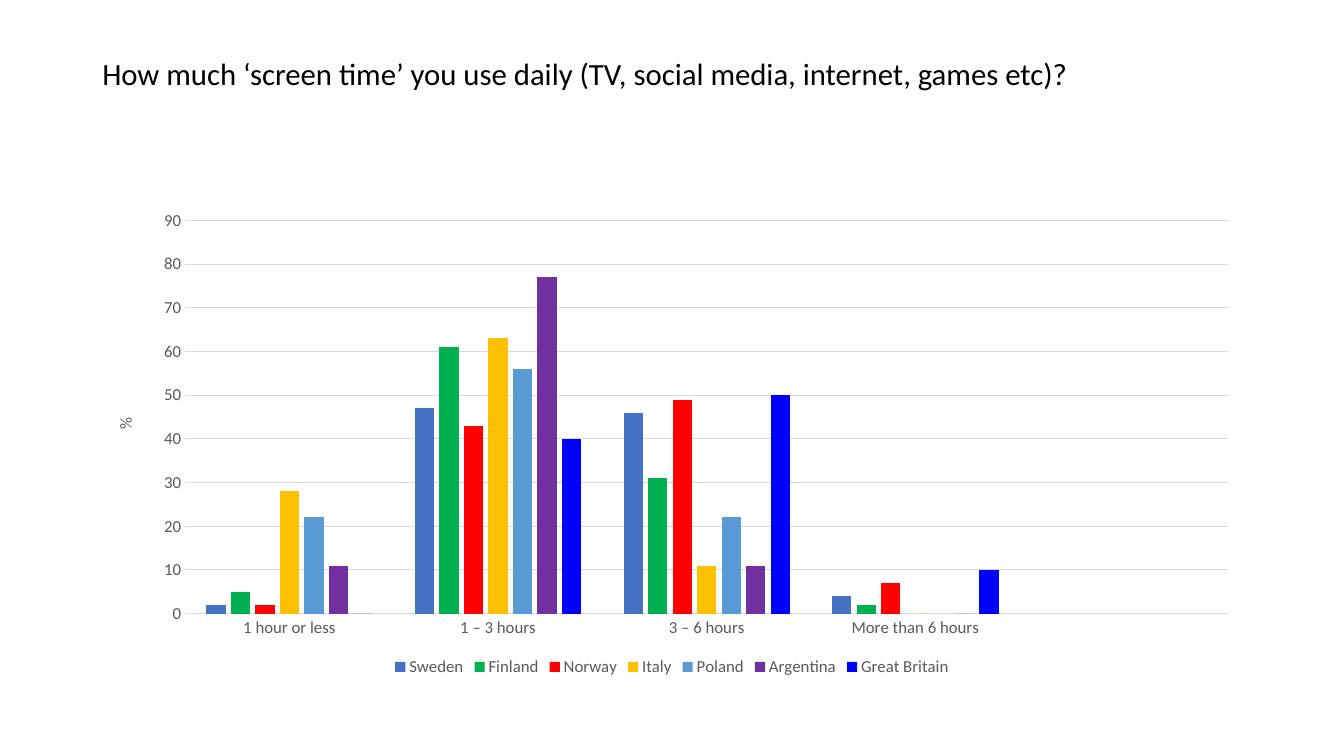
from lxml.etree import SubElement
from pptx import Presentation
from pptx.chart.data import CategoryChartData
from pptx.dml.color import RGBColor
from pptx.enum.chart import XL_CHART_TYPE, XL_LEGEND_POSITION, XL_TICK_MARK
from pptx.enum.text import MSO_ANCHOR
from pptx.oxml.ns import qn
from pptx.util import Pt

FONT = "Calibri"
BLACK = RGBColor(0x00, 0x00, 0x00)
GREY = RGBColor(0x59, 0x59, 0x59)
GRID = RGBColor(0xD9, 0xD9, 0xD9)
QUESTION = "How much ‘screen time’ you use daily (TV, social media, internet, games etc)?"
HOURS = ["1 hour or less", "1 – 3 hours", "3 – 6 hours", "More than 6 hours", ""]
COUNTRIES = [
    ("Sweden", [2, 47, 46, 4, None], RGBColor(0x44, 0x72, 0xC4)),
    ("Finland", [5, 61, 31, 2, None], RGBColor(0x00, 0xB0, 0x50)),
    ("Norway", [2, 43, 49, 7, None], RGBColor(0xFF, 0x00, 0x00)),
    ("Italy", [28, 63, 11, 0, None], RGBColor(0xFF, 0xC0, 0x00)),
    ("Poland", [22, 56, 22, None, None], RGBColor(0x5B, 0x9B, 0xD5)),
    ("Argentina", [11, 77, 11, 0, None], RGBColor(0x70, 0x30, 0xA0)),
    ("Great Britain", [0, 40, 50, 10, None], RGBColor(0x00, 0x00, 0xFF)),
]
PLOT_AREA = {"x": 0.08, "y": 0.04, "w": 0.9, "h": 0.82}


def style_font(font, size, color):
    """Set the typeface, size and colour of a font."""
    font.name = FONT
    font.size = Pt(size)
    font.bold = False
    font.color.rgb = color


def style_line(line, color):
    """Draw a thin line in the given colour."""
    line.color.rgb = color
    line.width = Pt(0.75)


def add_question(slide, left, top, width, height):
    """Place the survey question in its box."""
    question = slide.shapes.add_textbox(Pt(left), Pt(top), Pt(width), Pt(height))
    frame = question.text_frame
    frame.word_wrap = True
    frame.vertical_anchor = MSO_ANCHOR.TOP
    frame.margin_top = Pt(13)
    paragraph = frame.paragraphs[0]
    paragraph.line_spacing = 0.9
    run = paragraph.add_run()
    run.text = QUESTION
    style_font(run.font, 22, BLACK)


def place_plot(chart, fractions):
    """Fix the inner plot area to fractions of the chart box."""
    plot_area = chart.plots[0]._element.getparent()
    for previous in plot_area.findall(qn("c:layout")):
        plot_area.remove(previous)
    layout = SubElement(plot_area, qn("c:layout"))
    plot_area.insert(0, layout)
    manual = SubElement(layout, qn("c:manualLayout"))
    settings = {"layoutTarget": "inner", "xMode": "edge", "yMode": "edge", **fractions}
    for tag, value in settings.items():
        SubElement(manual, qn(f"c:{tag}")).set("val", str(value))


def style_axes(chart):
    """Format the hours axis and the percentage axis."""
    hours, percent = chart.category_axis, chart.value_axis
    for axis in (hours, percent):
        axis.major_tick_mark = axis.minor_tick_mark = XL_TICK_MARK.NONE
        style_font(axis.tick_labels.font, 12, GREY)
    style_line(hours.format.line, GRID)
    percent.format.line.fill.background()
    percent.minimum_scale, percent.maximum_scale, percent.major_unit = 0, 90, 10
    percent.has_major_gridlines = True
    style_line(percent.major_gridlines.format.line, GRID)
    unit = percent.axis_title.text_frame.paragraphs[0].add_run()
    unit.text = "%"
    style_font(unit.font, 12, GREY)


def add_screen_time_chart(slide, left, top, width, height):
    """Place the column chart of screen time by country."""
    answers = CategoryChartData(number_format="0")
    answers.categories = HOURS
    for country, shares, _ in COUNTRIES:
        answers.add_series(country, shares)
    chart = slide.shapes.add_chart(
        XL_CHART_TYPE.COLUMN_CLUSTERED, Pt(left), Pt(top), Pt(width), Pt(height), answers
    ).chart
    style_font(chart.font, 10, BLACK)
    chart.has_title = False
    columns = chart.plots[0]
    columns.gap_width, columns.overlap = 219, -27
    columns.vary_by_categories = False
    for series, (_, _, color) in zip(columns.series, COUNTRIES):
        series.invert_if_negative = False
        series.format.fill.solid()
        series.format.fill.fore_color.rgb = color
    style_axes(chart)
    chart.has_legend = True
    chart.legend.position = XL_LEGEND_POSITION.BOTTOM
    chart.legend.include_in_layout = False
    style_font(chart.legend.font, 12, GREY)
    place_plot(chart, PLOT_AREA)


def main():
    """Build and save the slide."""
    deck = Presentation()
    deck.slide_width, deck.slide_height = Pt(960), Pt(540)
    slide = deck.slides.add_slide(deck.slide_layouts[6])
    add_question(slide, 66, 28.75, 828, 104.4)
    add_screen_time_chart(slide, 66, 143.75, 828, 342.6)
    deck.save("out.pptx")


if __name__ == "__main__":
    main()
